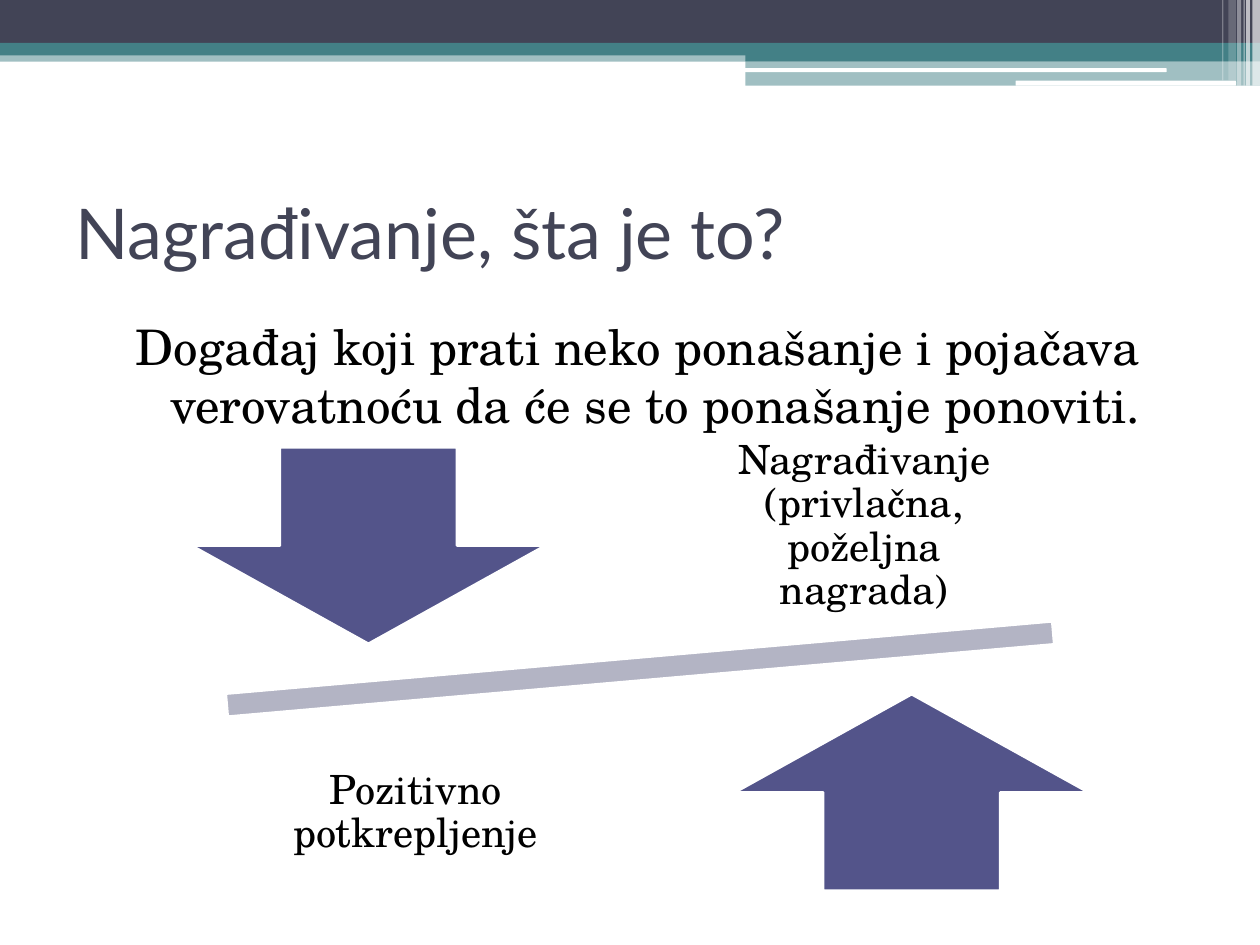
"""Build a slide on reward with a tilted beam between two arrows."""
import dataclasses
import typing

import lxml.etree
import pptx
import pptx.dml.color
import pptx.enum.shapes
import pptx.enum.text
import pptx.oxml.ns
import pptx.util

Pt = pptx.util.Pt
Kind = pptx.enum.shapes.MSO_SHAPE
Align = pptx.enum.text.PP_ALIGN
Anchor = pptx.enum.text.MSO_ANCHOR
qn = pptx.oxml.ns.qn


@dataclasses.dataclass(frozen=True)
class Theme:
    """Colours, fonts and type sizes."""
    dark: str = "424456"
    teal: str = "438086"
    white: str = "FFFFFF"
    black: str = "000000"
    arrow: str = "53548A"
    beam: str = "B3B4C4"
    head_font: str = "Lato"
    text_font: str = "TeX Gyre Schola"
    head_size: float = 40
    text_size: float = 28
    label_size: float = 23
    edge: float = 1.5


THEME = Theme()


class Box(typing.NamedTuple):
    """Left, top, width and height in points."""
    left: float
    top: float
    width: float
    height: float

    def sides(self) -> list[pptx.util.Length]:
        """Give the four lengths to python-pptx."""
        return [Pt(side) for side in self]


@dataclasses.dataclass(frozen=True)
class Form:
    """A filled shape."""
    box: Box
    fill: str
    alpha: int = 100
    kind: Kind = Kind.RECTANGLE
    turn: float = 0
    edge: str | None = None


@dataclasses.dataclass(frozen=True)
class Text:
    """A text box with one paragraph."""
    box: Box
    words: str
    font: dict
    para: dict = dataclasses.field(default_factory=dict)
    frame: dict = dataclasses.field(default_factory=dict)
    margin: float = 0
    indent: float = 0


def apply(target: typing.Any, values: dict) -> None:
    """Set each named attribute on the target."""
    for name, value in values.items():
        setattr(target, name, value)


def colour(code: str) -> pptx.dml.color.RGBColor:
    """Turn a hex code into a colour."""
    return pptx.dml.color.RGBColor.from_string(code)


def draw_form(slide: typing.Any, form: Form) -> None:
    """Draw one filled shape."""
    shape = slide.shapes.add_shape(form.kind, *form.box.sides())
    shape.shadow.inherit = False
    shape.rotation = form.turn
    shape.fill.solid()
    shape.fill.fore_color.rgb = colour(form.fill)
    if form.alpha < 100:
        paint = next(shape.element.spPr.iter(qn("a:srgbClr")))
        lxml.etree.SubElement(paint, qn("a:alpha"), val=str(form.alpha * 1000))
    if form.edge:
        shape.line.color.rgb = colour(form.edge)
        shape.line.width = Pt(THEME.edge)
    else:
        shape.line.fill.background()


def draw_text(slide: typing.Any, text: Text) -> None:
    """Draw one text box."""
    frame = slide.shapes.add_textbox(*text.box.sides()).text_frame
    apply(frame, {"word_wrap": True, **text.frame})
    para = frame.paragraphs[0]
    apply(para, text.para)
    if text.margin:
        props = para._p.get_or_add_pPr()
        props.set("marL", str(Pt(text.margin)))
        props.set("indent", str(Pt(text.indent)))
    run = para.add_run()
    run.text = text.words
    apply(run.font, text.font)
    run.font.color.rgb = colour(THEME.dark if text.font is HEAD else THEME.black)


HEAD = {"name": THEME.head_font, "size": Pt(THEME.head_size)}
BODY = {"name": THEME.text_font, "size": Pt(THEME.text_size)}
LABEL = {"name": THEME.text_font, "size": Pt(THEME.label_size)}
MIDDLE = {"vertical_anchor": Anchor.MIDDLE}
INSET = {f"margin_{side}": Pt(13) for side in ("left", "top", "right", "bottom")}
TIGHT = {"alignment": Align.CENTER, "line_spacing": 0.9}

BANDS = [
    Form(Box(0, 28.8, 720, 6.5), THEME.teal, 50),
    Form(Box(0, 0, 720, 24.5), THEME.dark),
    Form(Box(0, 24.5, 720, 7.2), THEME.teal),
    Form(Box(426, 28, 294, 7), THEME.teal),
    Form(Box(426, 34.7, 294, 14.2), THEME.teal, 50),
    Form(Box(425.5, 39, 241.2, 2.2), THEME.white, kind=Kind.ROUNDED_RECTANGLE),
    Form(Box(580.3, 46.1, 126, 2.9), THEME.white, kind=Kind.ROUNDED_RECTANGLE),
]
STRIPES = [
    Form(Box(left, 0, width, height), THEME.white, alpha)
    for left, width, height, alpha in [
        (715.7, 4.3, 49, 65),
        (712.1, 2.2, 49, 65),
        (710.6, 0.7, 49, 60),
        (707, 2.2, 49, 40),
        (702, 4.3, 46, 20),
        (698.4, 0.7, 46, 30),
    ]
]
BALANCE = [
    Form(Box(43.2, 354.2, 645.1, 56.2), THEME.beam, kind=Kind.MATH_MINUS,
         turn=355, edge=THEME.white),
    Form(Box(109.4, 255.6, 202.3, 112.3), THEME.arrow, kind=Kind.DOWN_ARROW,
         edge=THEME.white),
    Form(Box(419.8, 396.7, 202.3, 112.3), THEME.arrow, kind=Kind.UP_ARROW,
         edge=THEME.white),
]
TEXTS = [
    Text(Box(36, 90, 648, 84.2), "Nagrađivanje, šta je to?", HEAD, frame=MIDDLE),
    Text(Box(36, 177.1, 648, 340.6),
         "Događaj koji prati neko ponašanje i pojačava "
         "verovatnoću da će se to ponašanje ponoviti.",
         BODY, {"alignment": Align.CENTER, "space_before": Pt(3)},
         margin=28.8, indent=-20.2),
    Text(Box(385.9, 241.9, 216, 118.1),
         "Nagrađivanje (privlačna, poželjna nagrada)",
         LABEL, TIGHT, MIDDLE | INSET),
    Text(Box(129.6, 405.4, 216, 118.1), "Pozitivno potkrepljenje",
         LABEL, TIGHT, MIDDLE | INSET),
]


def main() -> None:
    """Build and save the slide."""
    deck = pptx.Presentation()
    apply(deck, {"slide_width": Pt(720), "slide_height": Pt(540)})
    slide = deck.slides.add_slide(deck.slide_layouts[6])
    for form in BANDS + STRIPES + BALANCE:
        draw_form(slide, form)
    for text in TEXTS:
        draw_text(slide, text)
    deck.save("out.pptx")


if __name__ == "__main__":
    main()
